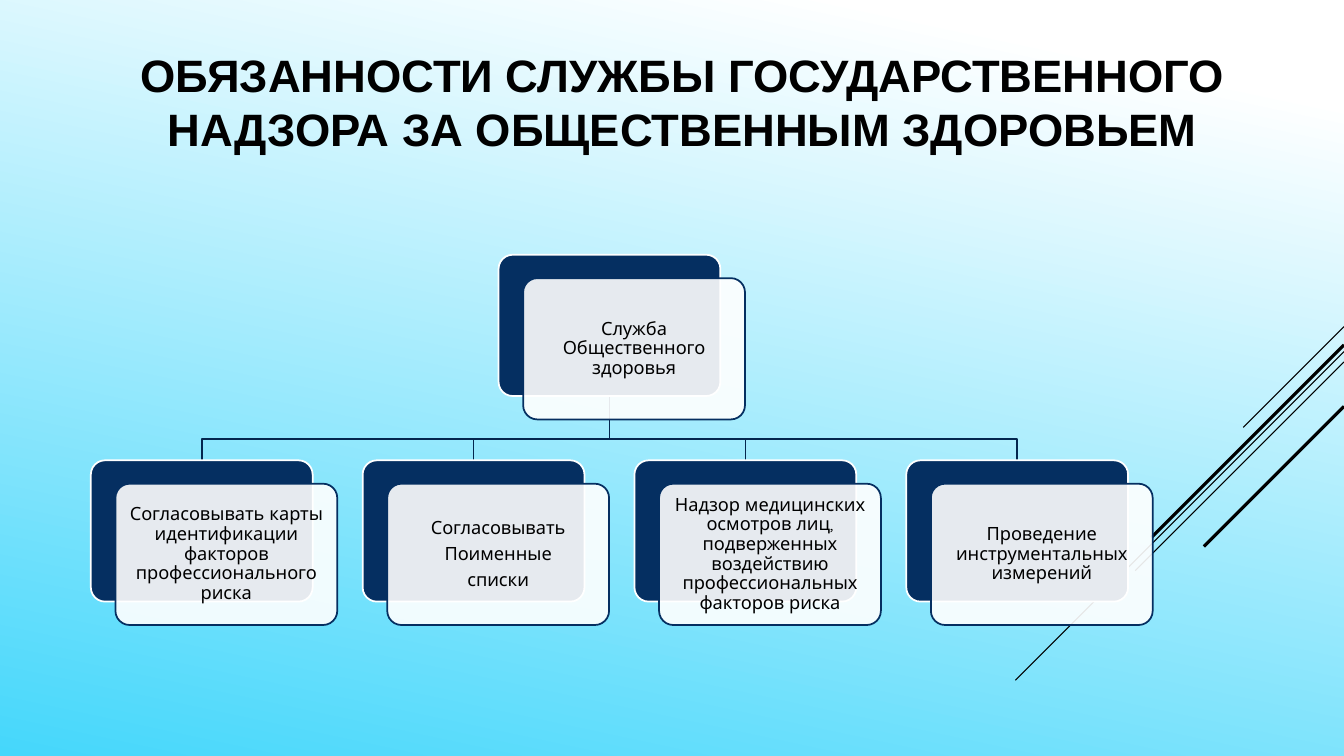
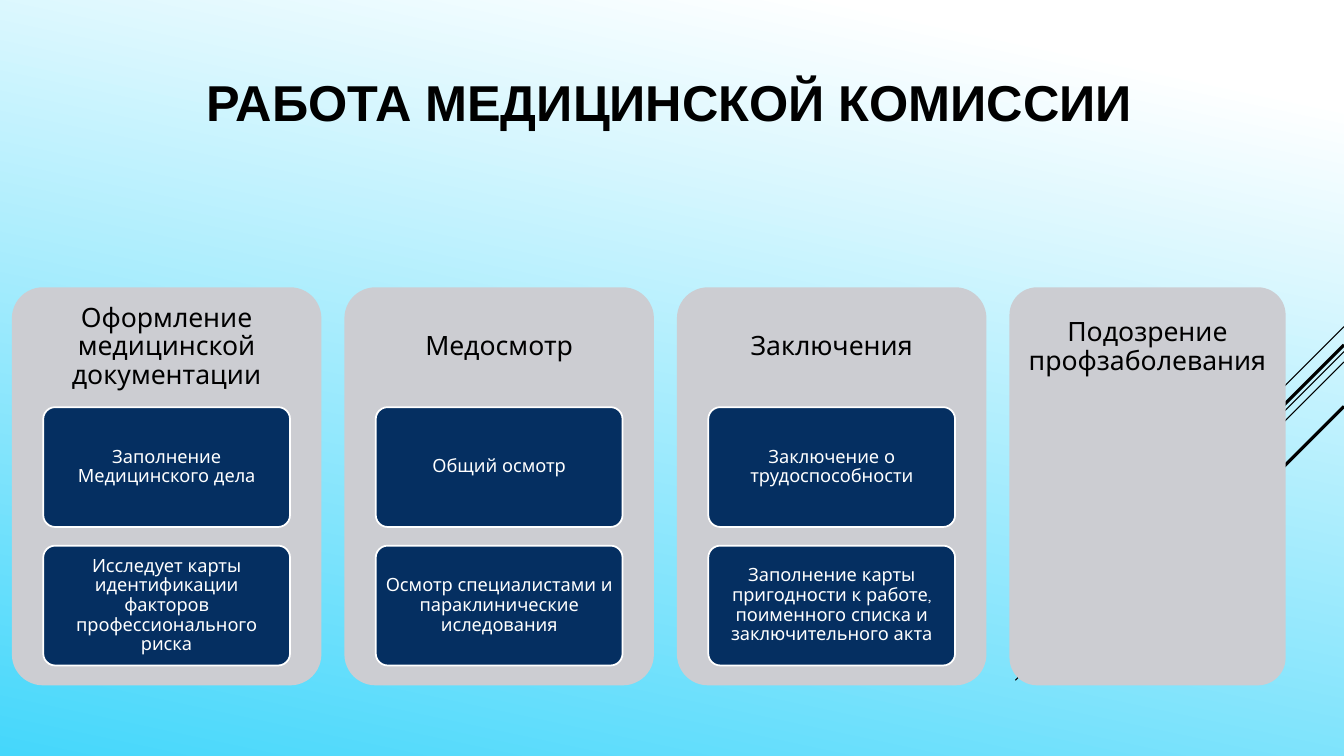
from lxml import etree
from pptx import Presentation
from pptx.dml.color import RGBColor
from pptx.enum.shapes import MSO_CONNECTOR, MSO_SHAPE
from pptx.enum.text import MSO_ANCHOR, MSO_AUTO_SIZE, PP_ALIGN
from pptx.oxml.ns import qn
from pptx.util import Cm, Pt

ROUND, LINE = MSO_SHAPE.ROUNDED_RECTANGLE, MSO_CONNECTOR.STRAIGHT
MID, CENTER, FIXED = MSO_ANCHOR.MIDDLE, PP_ALIGN.CENTER, MSO_AUTO_SIZE.NONE

NAVY, EDGE, GREY = "052F61", "04264E", "CCCDD2"
WHITE, BLACK, SKY = "FFFFFF", "000000", "45D7FB"
WIDE, HIGH = 33.87, 19.05

# Diagonal rays from the right edge: start height, run, line width
RAYS = [
    (8.23, 2.54, 0.75),
    (8.86, 8.28, 0.75),
    (9.12, 5.26, 0.75),
    (8.69, 4.85, 2.25),
    (10.24, 3.53, 2.25),
]

TITLE = {"name": "Arial", "bold": True}
BODY = {"name": "Quicksand"}

DUTIES = {
    "title": "ОБЯЗАННОСТИ СЛУЖБЫ ГОСУДАРСТВЕННОГО НАДЗОРА ЗА ОБЩЕСТВЕННЫМ ЗДОРОВЬЕМ",
    "size": 32.4,
    "width": 30.6,
    "root": ["Служба Общественного здоровья"],
    "nodes": [
        ["Согласовывать карты идентификации факторов профессионального риска"],
        ["Согласовывать", "Поименные", "списки"],
        ["Надзор медицинских осмотров лиц, подверженных воздействию "
         "профессиональных факторов риска"],
        ["Проведение инструментальных измерений"],
    ],
}
WORK = {
    "title": "РАБОТА МЕДИЦИНСКОЙ КОМИССИИ",
    "size": 36,
    "width": 29.95,
    # heading, panel width, tasks
    "panels": [
        ("Оформление медицинской документации", 7.8, [
            "Заполнение Медицинского дела",
            "Исследует карты идентификации факторов профессионального риска"]),
        ("Медосмотр", 7.8, [
            "Общий осмотр",
            "Осмотр специалистами и параклинические иследования"]),
        ("Заключения", 7.8, [
            "Заключение о трудоспособности",
            "Заполнение карты пригодности к работе, поименного списка "
            "и заключительного акта"]),
        ("Подозрение профзаболевания", 6.96, []),
    ],
}


def rgb(code):
    return RGBColor.from_string(code)


def assign(item, values):
    for key, value in values.items():
        setattr(item, key, value)


def style(font, size, color, values):
    assign(font, {"size": Pt(size), **values})
    font.color.rgb = rgb(color)


def write(shape, lines, size, color, pad):
    """Fill a shape with centred paragraphs; pad is (side, top) in cm."""
    frame = shape.text_frame
    side, top = map(Cm, pad)
    assign(frame, {
        "word_wrap": True, "vertical_anchor": MID,
        "margin_left": side, "margin_right": side,
        "margin_top": top, "margin_bottom": top,
    })
    frame.text = "\n".join(lines)
    for para in frame.paragraphs:
        assign(para, {"alignment": CENTER, "line_spacing": 0.9,
                      "space_after": Pt(0.35 * size)})
        style(para.runs[0].font, size, color, BODY)


def stroke(line, color, width):
    line.color.rgb = rgb(color)
    line.width = Pt(width)


def box(slide, at, fill, edge=None, alpha=None):
    shape = slide.shapes.add_shape(ROUND, *map(Cm, at))
    shape.shadow.inherit = False
    shape.adjustments[0] = 0.1
    shape.fill.solid()
    shape.fill.fore_color.rgb = rgb(fill)
    if alpha:
        tint = shape.fill._xPr.find(".//" + qn("a:srgbClr"))
        etree.SubElement(tint, qn("a:alpha")).set("val", str(alpha * 1000))
    if edge:
        stroke(shape.line, edge, 1.25)
    else:
        shape.line.fill.background()
    return shape


def dress(deck, slide):
    """Give the slide master its gradient and rays, drawn first on a slide."""
    master = deck.slide_master
    fill = master.background.fill
    fill.gradient()
    fill.gradient_angle = 258
    for stop, (place, color) in zip(fill.gradient_stops,
                                    [(0.1, WHITE), (1, SKY)]):
        stop.position = place
        stop.color.rgb = rgb(color)
    for index, (top, run, width) in enumerate(RAYS):
        ray = slide.shapes.add_connector(
            LINE, *map(Cm, (WIDE, top, WIDE - run, top + run)))
        stroke(ray.line, BLACK, width)
        etree.SubElement(ray.element.spPr, qn("a:effectLst"))
        master.shapes.element.insert(2 + index, ray.element)


def start(deck, data):
    """Add a slide with its title set."""
    slide = deck.slides.add_slide(deck.slide_layouts[5])
    title = slide.shapes.title
    assign(title, {"left": Cm(1.9), "top": Cm(0.46),
                   "width": Cm(data["width"]), "height": Cm(4.19)})
    frame = title.text_frame
    assign(frame, {"text": data["title"], "word_wrap": True,
                   "auto_size": FIXED, "vertical_anchor": MID})
    para = frame.paragraphs[0]
    assign(para, {"alignment": CENTER, "line_spacing": 1.0})
    style(para.runs[0].font, data["size"], BLACK, TITLE)
    return slide


def branch(slide, points):
    path = [(Cm(x), Cm(y)) for x, y in points]
    pen = slide.shapes.build_freeform(*path[0])
    pen.add_line_segments(path[1:], close=False)
    shape = pen.convert_to_shape()
    shape.shadow.inherit = False
    shape.fill.background()
    stroke(shape.line, EDGE, 1.25)


def node(slide, left, top, size, lines):
    """Draw a navy plate with a pale text card shifted over it."""
    box(slide, (left, top, *size), NAVY, WHITE)
    card = box(slide, (left + 0.62, top + 0.59, *size), WHITE, NAVY, 90)
    write(card, lines, 13, BLACK, (0.13, 0.13))


def tree(slide, data):
    size = wide, high = 5.59, 3.56
    top, low, bend = 6.42, 11.6, 11.07
    lefts = [2.29 + 6.85 * i for i in range(len(data["nodes"]))]
    mid = (lefts[0] + lefts[-1]) / 2
    hub = mid + wide / 2
    for left in lefts:
        end = left + wide / 2
        branch(slide, [(hub, top + high), (hub, bend), (end, bend), (end, low)])
    node(slide, mid, top, size, data["root"])
    for left, lines in zip(lefts, data["nodes"]):
        node(slide, left, low, size, lines)


def board(slide, data):
    top, head = 7.24, 3.02
    for col, (name, wide, tasks) in enumerate(data["panels"]):
        left = 0.3 + 8.38 * col
        box(slide, (left, top, wide, 10.03), GREY)
        label = slide.shapes.add_textbox(*map(Cm, (left, top, wide, head)))
        write(label, [name], 19, BLACK, (0.2, 0.2))
        for row, task in enumerate(tasks):
            at = left + 0.79, top + head + 3.49 * row, 6.22, 3.02
            write(box(slide, at, NAVY, WHITE), [task], 13, WHITE, (0.1, 0.08))


def main():
    deck = Presentation()
    assign(deck, {"slide_width": Cm(WIDE), "slide_height": Cm(HIGH)})
    first = start(deck, DUTIES)
    dress(deck, first)
    tree(first, DUTIES)
    board(start(deck, WORK), WORK)
    deck.save("out.pptx")


if __name__ == "__main__":
    main()
